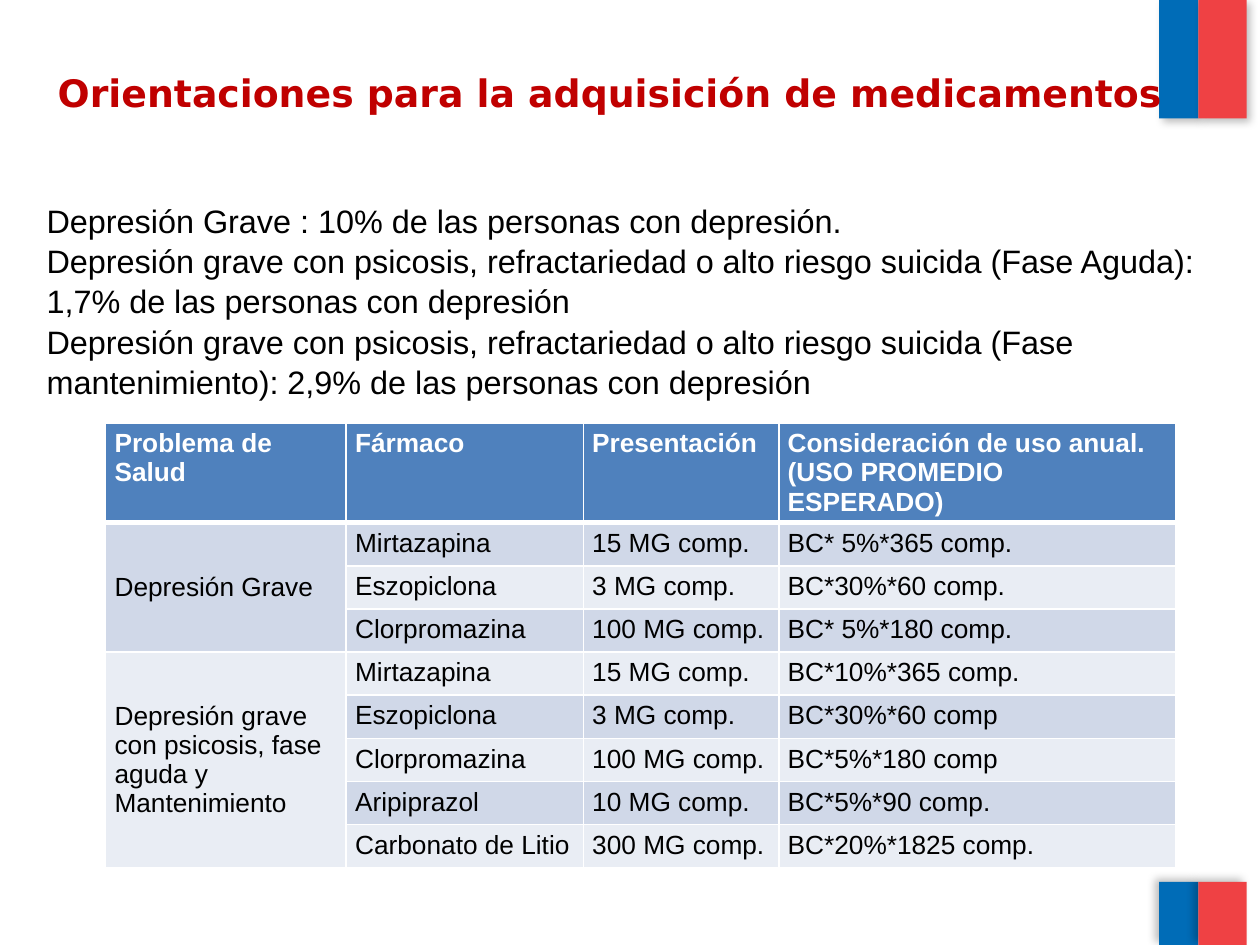
from lxml import etree
from pptx import Presentation
from pptx.dml.color import RGBColor
from pptx.enum.shapes import MSO_SHAPE
from pptx.enum.text import MSO_ANCHOR, MSO_AUTO_SIZE, PP_ALIGN
from pptx.oxml import parse_xml
from pptx.oxml.ns import nsdecls, qn
from pptx.util import Cm, Pt

RECTANGLE = MSO_SHAPE.RECTANGLE
TOP, MIDDLE = MSO_ANCHOR.TOP, MSO_ANCHOR.MIDDLE
LEFT = PP_ALIGN.LEFT
NO_AUTOFIT = MSO_AUTO_SIZE.NONE

COLORS = {
    "blue": "006CB7",
    "red": "EF4144",
    "title": "C00000",
    "text": "000000",
    "white": "FFFFFF",
    "header": "4F81BD",
    "odd": "D0D8E8",
    "even": "E9EDF4",
}


def format_runs(paragraph, font_name, size, color, bold=False):
    for run in paragraph.runs:
        run.font.name = font_name
        run.font.size = Pt(size)
        run.font.bold = bold
        run.font.color.rgb = RGBColor.from_string(COLORS[color])


def set_borders(cell, bottom_width):
    properties = cell._tc.get_or_add_tcPr()
    widths = {"lnL": 1, "lnR": 1, "lnT": 1, "lnB": bottom_width}
    for position, (side, width) in enumerate(widths.items()):
        border = parse_xml(
            f'<a:{side} {nsdecls("a")} w="{Pt(width)}"><a:solidFill>'
            f'<a:srgbClr val="{COLORS["white"]}"/></a:solidFill></a:{side}>'
        )
        properties.insert(position, border)


presentation = Presentation()
presentation.slide_width = Cm(25.4)
presentation.slide_height = Cm(19.05)
slide = presentation.slides.add_slide(presentation.slide_layouts[5])

for top, height, angle in [(0, 2.39, 45), (17.78, 1.27, 215)]:
    for left, width, color in [(23.37, 0.79, "blue"), (24.16, 0.97, "red")]:
        band = slide.shapes.add_shape(RECTANGLE, Cm(left), Cm(top), Cm(width), Cm(height))
        band.fill.solid()
        band.fill.fore_color.rgb = RGBColor.from_string(COLORS[color])
        band.line.fill.background()
        band.shadow.inherit = False
        effects = band.element.spPr.find(qn("a:effectLst"))
        shadow = etree.SubElement(
            effects, qn("a:outerShdw"), blurRad=str(Pt(5)), dist=str(Pt(3)),
            dir=str(angle * 60000), algn="tl", rotWithShape="0",
        )
        shadow_color = etree.SubElement(shadow, qn("a:srgbClr"), val=COLORS["text"])
        etree.SubElement(shadow_color, qn("a:alpha"), val="25000")

title = slide.shapes.title
title.element.getparent().append(title.element)
title.left, title.top, title.width, title.height = Cm(0.91), Cm(1.27), Cm(23.65), Cm(2.26)
title.text_frame.text = "Orientaciones para la adquisición de medicamentos"
title.text_frame.auto_size = NO_AUTOFIT
title.text_frame.vertical_anchor = TOP
heading = title.text_frame.paragraphs[0]
heading.alignment = LEFT
format_runs(heading, "DejaVu Sans", 21.6, "title", True)

header = [
    "Problema de Salud",
    "Fármaco",
    "Presentación",
    "Consideración de uso anual.\n(USO PROMEDIO ESPERADO)",
]
treatments = {
    "Depresión Grave": [
        ("Mirtazapina", "15 MG comp.", "BC* 5%*365 comp."),
        ("Eszopiclona", "3 MG comp.", "BC*30%*60 comp."),
        ("Clorpromazina", "100 MG comp.", "BC* 5%*180 comp."),
    ],
    "Depresión grave con psicosis, fase aguda y Mantenimiento": [
        ("Mirtazapina", "15 MG comp.", "BC*10%*365 comp."),
        ("Eszopiclona", "3 MG comp.", "BC*30%*60 comp"),
        ("Clorpromazina", "100 MG comp.", "BC*5%*180 comp"),
        ("Aripiprazol", "10 MG comp.", "BC*5%*90 comp."),
        ("Carbonato de Litio", "300 MG comp.", "BC*20%*1825 comp."),
    ],
}
rows = [header]
spans = []
for problem, drugs in treatments.items():
    spans.append((len(rows), len(rows) + len(drugs) - 1))
    for index, drug in enumerate(drugs):
        rows.append([problem if index == 0 else "", *drug])

medicines = slide.shapes.add_table(
    len(rows), len(header), Cm(2.13), Cm(8.53), Cm(21.57), Cm(8.43)
).table
for column, width in zip(medicines.columns, [4.85, 4.78, 3.94, 8]):
    column.width = Cm(width)

for row_number, values in enumerate(rows):
    is_header = row_number == 0
    medicines.rows[row_number].height = Cm(1.47 if is_header else 0.87)
    fill = "header" if is_header else "odd" if row_number % 2 else "even"
    for column_number, value in enumerate(values):
        cell = medicines.cell(row_number, column_number)
        cell.text_frame.text = value
        cell.margin_left = cell.margin_right = Cm(0.18)
        cell.margin_top = cell.margin_bottom = Cm(0.12)
        cell.fill.solid()
        cell.fill.fore_color.rgb = RGBColor.from_string(COLORS[fill])
        set_borders(cell, 3 if is_header else 1)
        for paragraph in cell.text_frame.paragraphs:
            format_runs(paragraph, "Arial", 15, "white" if is_header else "text", is_header)

for first, last in spans:
    problem_cell = medicines.cell(first, 0)
    problem_cell.merge(medicines.cell(last, 0))
    problem_cell.vertical_anchor = MIDDLE

prevalence = slide.shapes.add_textbox(Cm(0.69), Cm(3.89), Cm(24.13), Cm(4.98)).text_frame
prevalence.word_wrap = True
statements = [
    "Depresión Grave : 10% de las personas con depresión.\v"
    "Depresión grave con psicosis, refractariedad o alto riesgo suicida (Fase Aguda): "
    "1,7% de las personas con depresión",
    "Depresión grave con psicosis, refractariedad o alto riesgo suicida "
    "(Fase mantenimiento): 2,9% de las personas con depresión",
]
prevalence.text = "\n".join(statements)
for paragraph in prevalence.paragraphs:
    paragraph.line_spacing = 1.04
    format_runs(paragraph, "Arial", 18.5, "text")

presentation.save("out.pptx")
